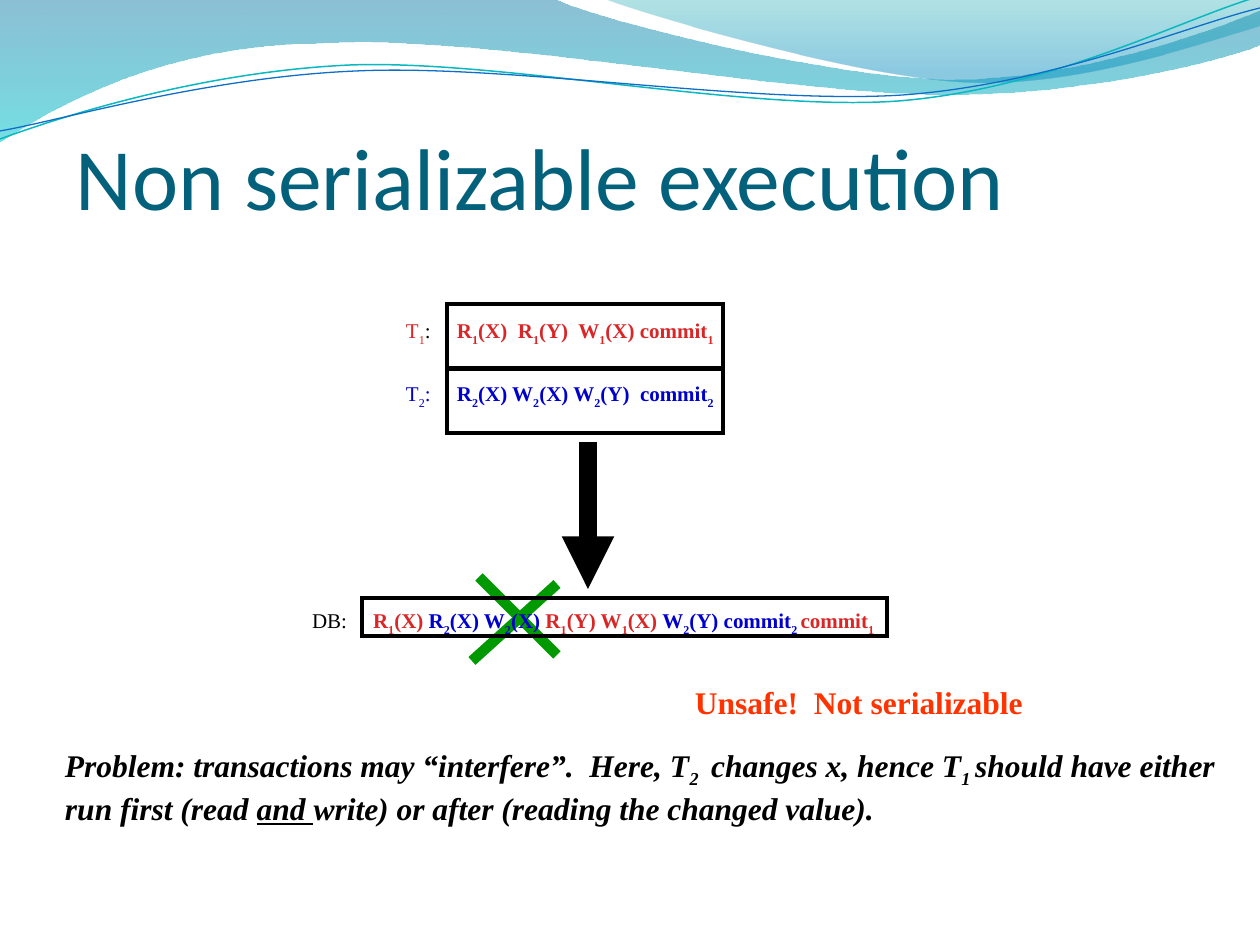
from dataclasses import dataclass

from lxml.etree import SubElement
from pptx import Presentation
from pptx.dml.color import RGBColor
from pptx.enum.shapes import MSO_CONNECTOR, MSO_SHAPE
from pptx.enum.text import MSO_ANCHOR, PP_ALIGN
from pptx.oxml.ns import qn
from pptx.util import Emu, Pt

EMU_PER_PX = 914400 / 126
BODY_FONT = "Times New Roman"

BLACK = RGBColor(0x00, 0x00, 0x00)
TITLE_TEAL = RGBColor(0x04, 0x61, 0x7B)
T1_RED = RGBColor(0xD9, 0x27, 0x27)
T2_BLUE = RGBColor(0x00, 0x00, 0xCC)
CROSS_GREEN = RGBColor(0x00, 0x99, 0x00)
WARNING_ORANGE = RGBColor(0xFF, 0x33, 0x00)
WAVE_BLUE = RGBColor(0x00, 0x74, 0xA1)
WAVE_AQUA = RGBColor(0x00, 0xC6, 0xCF)
CREST_TEAL = RGBColor(0x00, 0xA1, 0xA9)
CREST_BLUE = RGBColor(0x00, 0x8B, 0xBF)
STRAND_TEAL = RGBColor(0x0A, 0xB8, 0xBF)
STRAND_BLUE = RGBColor(0x0F, 0x6F, 0xC6)

Point = tuple[int, int]


@dataclass(frozen=True)
class Span:
    text: str
    color: RGBColor = BLACK
    bold: bool = False
    italic: bool = False
    underline: bool = False


@dataclass(frozen=True)
class GradientStop:
    color: RGBColor
    position: float
    opacity: int


@dataclass(frozen=True)
class Wave:
    start: Point
    segments: tuple[tuple[Point, ...], ...]
    stops: tuple[GradientStop, ...]


@dataclass(frozen=True)
class Strand:
    start: Point
    segments: tuple[tuple[Point, ...], ...]
    color: RGBColor
    width: float


@dataclass(frozen=True)
class Schedule:
    frame: tuple[int, int, int, int]
    text_box: tuple[int, int, int, int]
    tab: int
    spans: tuple[Span, ...]


WAVES = (
    Wave((0, -1), (
        ((554, -1),),
        ((600, 21), (837, 79), (955, 79)),
        ((1075, 79), (1207, 33), (1260, 11)),
        ((1261, 45),),
        ((1238, 55), (1096, 96), (940, 94)),
        ((784, 94), (481, 35), (324, 43)),
        ((163, 44), (58, 105), (-1, 142)),
    ), (GradientStop(WAVE_BLUE, 0, 45), GradientStop(WAVE_AQUA, 1, 55))),
    Wave((604, -1), (
        ((641, 14), (859, 78), (969, 82)),
        ((1079, 87), (1211, 40), (1260, 26)),
        ((1260, 0),),
    ), (GradientStop(CREST_TEAL, 0, 30), GradientStop(CREST_BLUE, 0.8, 45))),
)
STRANDS = (
    Strand((0, 139), (
        ((60, 117), (199, 72), (349, 65)),
        ((498, 59), (747, 112), (898, 101)),
        ((1050, 89), (1182, 19), (1257, -3)),
    ), STRAND_TEAL, 0.85),
    Strand((0, 131), (
        ((59, 121), (207, 77), (357, 71)),
        ((508, 64), (752, 105), (903, 95)),
        ((1053, 84), (1186, 26), (1260, 8)),
    ), STRAND_BLUE, 0.75),
)
SCHEDULES = (
    Schedule((362, 598, 525, 38), (306, 607, 598, 25), 61, (
        Span("DB:\t"),
        Span("R~1~(X) ", T1_RED, bold=True),
        Span("R~2~(X) W~2~(X)", T2_BLUE, bold=True),
        Span(" R~1~(Y) W~1~(X) ", T1_RED, bold=True),
        Span("W~2~(Y) commit~2 ~", T2_BLUE, bold=True),
        Span("commit~1~", T1_RED, bold=True),
    )),
    Schedule((447, 304, 276, 65), (400, 317, 340, 44), 51, (
        Span("T~1~", T1_RED),
        Span(":\t"),
        Span("R~1~(X)  R~1~(Y)  W~1~(X) commit~1~", T1_RED, bold=True),
    )),
    Schedule((447, 368, 276, 65), (400, 380, 340, 44), 51, (
        Span("T~2~:\t", T2_BLUE),
        Span("R~2~(X) W~2~(X) W~2~(Y)  commit~2~", T2_BLUE, bold=True),
    )),
)


def px(length: int) -> Emu:
    return Emu(round(length * EMU_PER_PX))


def write_text(frame, spans: tuple[Span, ...], *, size: int, font: str = BODY_FONT,
               insets: tuple[int, int] = (13, 6), anchor=MSO_ANCHOR.TOP, tab: int = 0) -> None:
    frame.word_wrap = True
    frame.vertical_anchor = anchor
    frame.margin_left = frame.margin_right = px(insets[0])
    frame.margin_top = frame.margin_bottom = px(insets[1])
    paragraph = frame.paragraphs[0]
    paragraph.alignment = PP_ALIGN.LEFT
    if tab:
        stops = SubElement(paragraph._p.get_or_add_pPr(), qn("a:tabLst"))
        SubElement(stops, qn("a:tab"), pos=str(px(tab)), algn="l")
    for span in spans:
        for index, piece in enumerate(span.text.split("~")):
            if not piece:
                continue
            run = paragraph.add_run()
            run.text = piece
            run.font.name = font
            run.font.size = Pt(size)
            run.font.bold = span.bold
            run.font.italic = span.italic
            run.font.underline = span.underline
            run.font.color.rgb = span.color
            if index % 2:
                run.font._element.set("baseline", "-25000")


def add_text(slide, box: tuple[int, int, int, int], spans: tuple[Span, ...], **style) -> None:
    write_text(slide.shapes.add_textbox(*map(px, box)).text_frame, spans, **style)


def add_outline(slide, outline: Wave | Strand, close: bool):
    vertices = [(px(x), px(y)) for segment in outline.segments for x, y in segment]
    builder = slide.shapes.build_freeform(*map(px, outline.start))
    builder.add_line_segments(vertices, close=close)
    shape = builder.convert_to_shape()
    shape.shadow.inherit = False
    steps = iter(list(shape._element.iter(qn("a:lnTo"))))
    for segment in outline.segments:
        legs = [next(steps) for _ in segment]
        if len(legs) == 3:
            track = legs[0].getparent()
            curve = SubElement(track, qn("a:cubicBezTo"))
            legs[0].addprevious(curve)
            for leg in legs:
                curve.append(leg[0])
                track.remove(leg)
    return shape


def add_wave(slide, wave: Wave) -> None:
    shape = add_outline(slide, wave, close=True)
    shape.line.fill.background()
    shape.fill.gradient()
    shape.fill.gradient_angle = 270
    for stop, setting in zip(shape.fill.gradient_stops, wave.stops):
        stop.color.rgb = setting.color
        stop.position = setting.position
    for color, setting in zip(shape._element.spPr.iter(qn("a:srgbClr")), wave.stops):
        SubElement(color, qn("a:alpha"), val=str(setting.opacity * 1000))


def add_strand(slide, strand: Strand) -> None:
    shape = add_outline(slide, strand, close=False)
    shape.fill.background()
    shape.line.color.rgb = strand.color
    shape.line.width = Pt(strand.width)


def add_line(slide, start: Point, end: Point, color: RGBColor, width: int,
             arrow: bool = False) -> None:
    line = slide.shapes.add_connector(MSO_CONNECTOR.STRAIGHT, *map(px, start + end))
    line.line.color.rgb = color
    line.line.width = Pt(width)
    if arrow:
        SubElement(line.line._get_or_add_ln(), qn("a:tailEnd"), type="triangle")
    SubElement(line._element.spPr, qn("a:effectLst"))


def add_schedule(slide, schedule: Schedule) -> None:
    frame = slide.shapes.add_shape(MSO_SHAPE.RECTANGLE, *map(px, schedule.frame))
    frame.shadow.inherit = False
    frame.fill.background()
    frame.line.color.rgb = BLACK
    frame.line.width = Pt(2)
    SubElement(frame.line._get_or_add_ln(), qn("a:miter"), lim="800000")
    add_text(slide, schedule.text_box, schedule.spans, size=12, insets=(6, 1), tab=schedule.tab)


def main() -> None:
    deck = Presentation()
    deck.slide_width, deck.slide_height = px(1260), px(945)
    slide = deck.slides.add_slide(deck.slide_layouts[5])
    for wave in WAVES:
        add_wave(slide, wave)
    for strand in STRANDS:
        add_strand(slide, strand)

    title = slide.shapes.title
    title.left, title.top, title.width, title.height = map(px, (63, 97, 1134, 158))
    write_text(title.text_frame, (Span("Non serializable execution", TITLE_TEAL),),
               size=50, font="Calibri", anchor=MSO_ANCHOR.MIDDLE)

    emphasis = {"bold": True, "italic": True}
    add_text(slide, (52, 740, 1176, 164), (
        Span("Problem: transactions may “interfere”.  Here, T~2 ~ changes x, hence T~1 ~"
             "should have either run first (read ", **emphasis),
        Span("and ", underline=True, **emphasis),
        Span("write) or after (reading the changed value).", **emphasis),
    ), size=18)
    add_line(slide, (479, 577), (557, 655), CROSS_GREEN, 6)
    add_line(slide, (557, 584), (472, 661), CROSS_GREEN, 6)
    add_text(slide, (682, 677, 556, 63),
             (Span("Unsafe!  Not serializable", WARNING_ORANGE, bold=True),), size=18)
    add_line(slide, (588, 442), (588, 589), BLACK, 10, arrow=True)
    for schedule in SCHEDULES:
        add_schedule(slide, schedule)
    deck.save("out.pptx")


if __name__ == "__main__":
    main()
